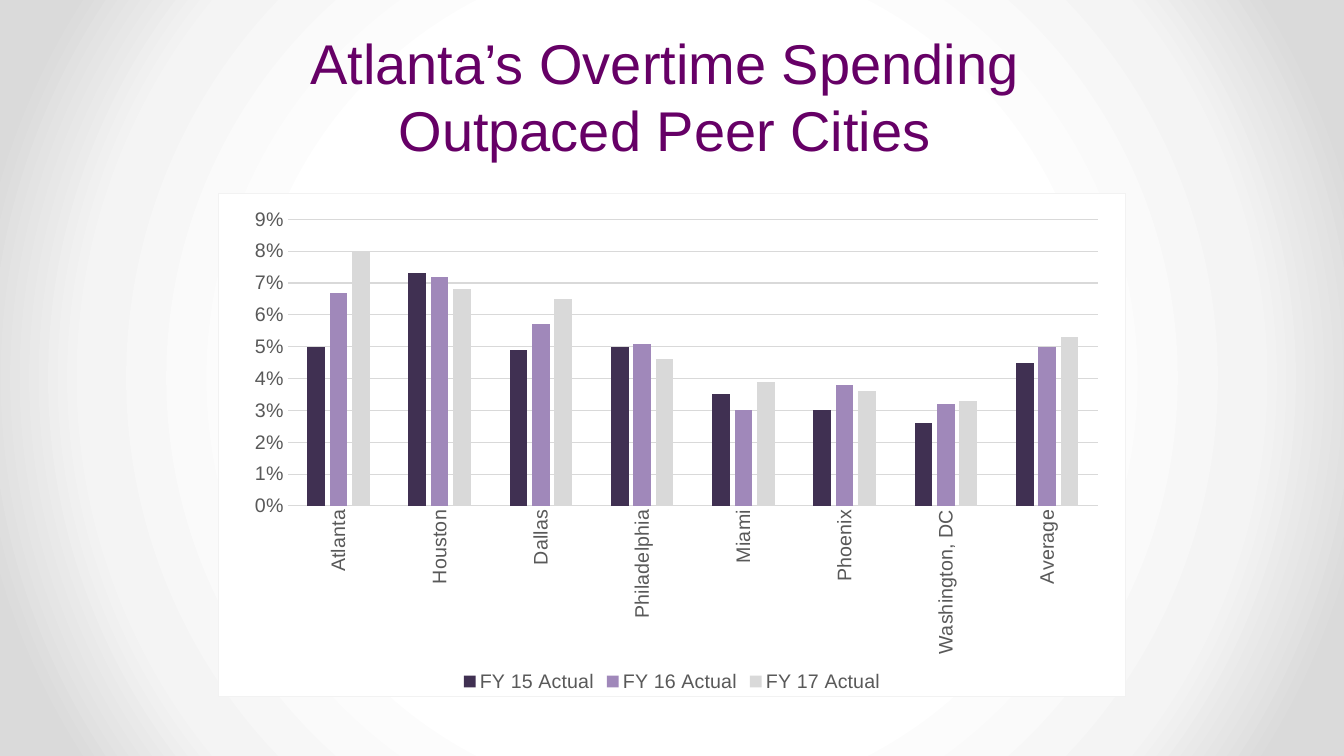
import pptx
import pptx.chart.data
import pptx.dml.color
import pptx.enum.chart
import pptx.enum.text
import pptx.oxml
import pptx.oxml.ns
import pptx.util

Pt = pptx.util.Pt
qn = pptx.oxml.ns.qn
RGB = pptx.dml.color.RGBColor.from_string

THEME = {
    "font": "Arial",
    "title_size": Pt(40),
    "chart_size": Pt(14),
    "title": "660066",
    "label": "595959",
    "grid": "D9D9D9",
    "panel": "FFFFFF",
    "panel_border": "F2F2F2",
    "series": ["403052", "A088BA", "D9D9D9"],
    "background": [(50, "FFFFFF"), (76, "F4F4F4"), (92, "DADADA")],
}


def parse_element(tag, content, attributes=""):
    namespaces = pptx.oxml.ns.nsdecls("a", "c")
    return pptx.oxml.parse_xml(f"<{tag} {namespaces} {attributes}>{content}</{tag}>")


def style_font(font, size, color):
    font.name = THEME["font"]
    font.size = size
    font.color.rgb = RGB(color)


presentation = pptx.Presentation()
presentation.slide_width = Pt(960)
presentation.slide_height = Pt(540)
slide = presentation.slides.add_slide(presentation.slide_layouts[6])

# Background: radial gradient from the centre
slide.background.fill.solid()
background = slide._element.find(".//" + qn("p:bgPr"))
stops = "".join(
    f'<a:gs pos="{position * 1000}"><a:srgbClr val="{color}"/></a:gs>'
    for position, color in THEME["background"]
)
gradient = parse_element(
    "a:gradFill",
    f'<a:gsLst>{stops}</a:gsLst><a:path path="circle">'
    '<a:fillToRect l="50000" t="50000" r="50000" b="50000"/></a:path>',
    'rotWithShape="1"',
)
background.replace(background.find(qn("a:solidFill")), gradient)

# Title
title = slide.shapes.add_textbox(0, 0, Pt(960), Pt(120))
title_frame = title.text_frame
title_frame.word_wrap = True
title_frame.margin_right = Pt(18)
title_frame.vertical_anchor = pptx.enum.text.MSO_ANCHOR.BOTTOM
paragraph = title_frame.paragraphs[0]
paragraph.text = "Atlanta’s Overtime Spending\vOutpaced Peer Cities"
paragraph.alignment = pptx.enum.text.PP_ALIGN.CENTER
paragraph.line_spacing = Pt(48)
style_font(paragraph.font, THEME["title_size"], THEME["title"])

# Overtime data
overtime = pptx.chart.data.CategoryChartData(number_format="0.0%")
overtime.categories = ["Atlanta", "Houston", "Dallas", "Philadelphia",
                       "Miami", "Phoenix", "Washington, DC", "Average"]
overtime.add_series("FY 15 Actual", [0.05, 0.073, 0.049, 0.05, 0.035, 0.03, 0.026, 0.045])
overtime.add_series("FY 16 Actual", [0.067, 0.072, 0.057, 0.051, 0.03, 0.038, 0.032, 0.05])
overtime.add_series("FY 17 Actual", [0.08, 0.068, 0.065, 0.046, 0.039, 0.036, 0.033, 0.053])

# Chart and columns
chart = slide.shapes.add_chart(
    pptx.enum.chart.XL_CHART_TYPE.COLUMN_CLUSTERED,
    Pt(156), Pt(138), Pt(648), Pt(360), overtime,
).chart
chart.has_title = False
style_font(chart.font, THEME["chart_size"], THEME["label"])
plot = chart.plots[0]
plot.gap_width = 219
plot.overlap = -27
plot.vary_by_categories = False
for series, color in zip(plot.series, THEME["series"]):
    series.format.fill.solid()
    series.format.fill.fore_color.rgb = RGB(color)
    series.invert_if_negative = False

# Axes
category_axis, value_axis = chart.category_axis, chart.value_axis
for axis in (category_axis, value_axis):
    axis.major_tick_mark = pptx.enum.chart.XL_TICK_MARK.NONE
    axis.minor_tick_mark = pptx.enum.chart.XL_TICK_MARK.NONE
    style_font(axis.tick_labels.font, THEME["chart_size"], THEME["label"])
value_axis.minimum_scale = 0
value_axis.maximum_scale = 0.09
value_axis.major_unit = 0.01
value_axis.tick_labels.number_format = "0%"
value_axis.tick_labels.number_format_is_linked = False
value_axis.format.line.fill.background()
value_axis.has_major_gridlines = True
for line in (category_axis.format.line, value_axis.major_gridlines.format.line):
    line.color.rgb = RGB(THEME["grid"])
    line.width = Pt(0.75)
category_text = category_axis._element.find(qn("c:txPr")).find(qn("a:bodyPr"))
category_text.set("rot", "-5400000")
category_text.set("vert", "horz")

# Legend
chart.has_legend = True
chart.legend.position = pptx.enum.chart.XL_LEGEND_POSITION.BOTTOM
chart.legend.include_in_layout = False
style_font(chart.legend.font, THEME["chart_size"], THEME["label"])

# Plot area placement
plot_area = chart._chartSpace.chart.plotArea
for layout in plot_area.findall(qn("c:layout")):
    plot_area.remove(layout)
placement = '<c:layoutTarget val="inner"/><c:xMode val="edge"/><c:yMode val="edge"/>'
for side, share in (("x", 0.076), ("y", 0.051), ("w", 0.894), ("h", 0.57)):
    placement += f'<c:{side} val="{share}"/>'
plot_area.insert(0, parse_element("c:layout", f"<c:manualLayout>{placement}</c:manualLayout>"))

# Chart panel fill and border
panel_fill, panel_border = (
    f'<a:solidFill><a:srgbClr val="{THEME[key]}"/></a:solidFill>'
    for key in ("panel", "panel_border")
)
chart._chartSpace.chart.addnext(parse_element(
    "c:spPr", f'{panel_fill}<a:ln w="{Pt(0.75)}">{panel_border}</a:ln>'
))

presentation.save("out.pptx")
